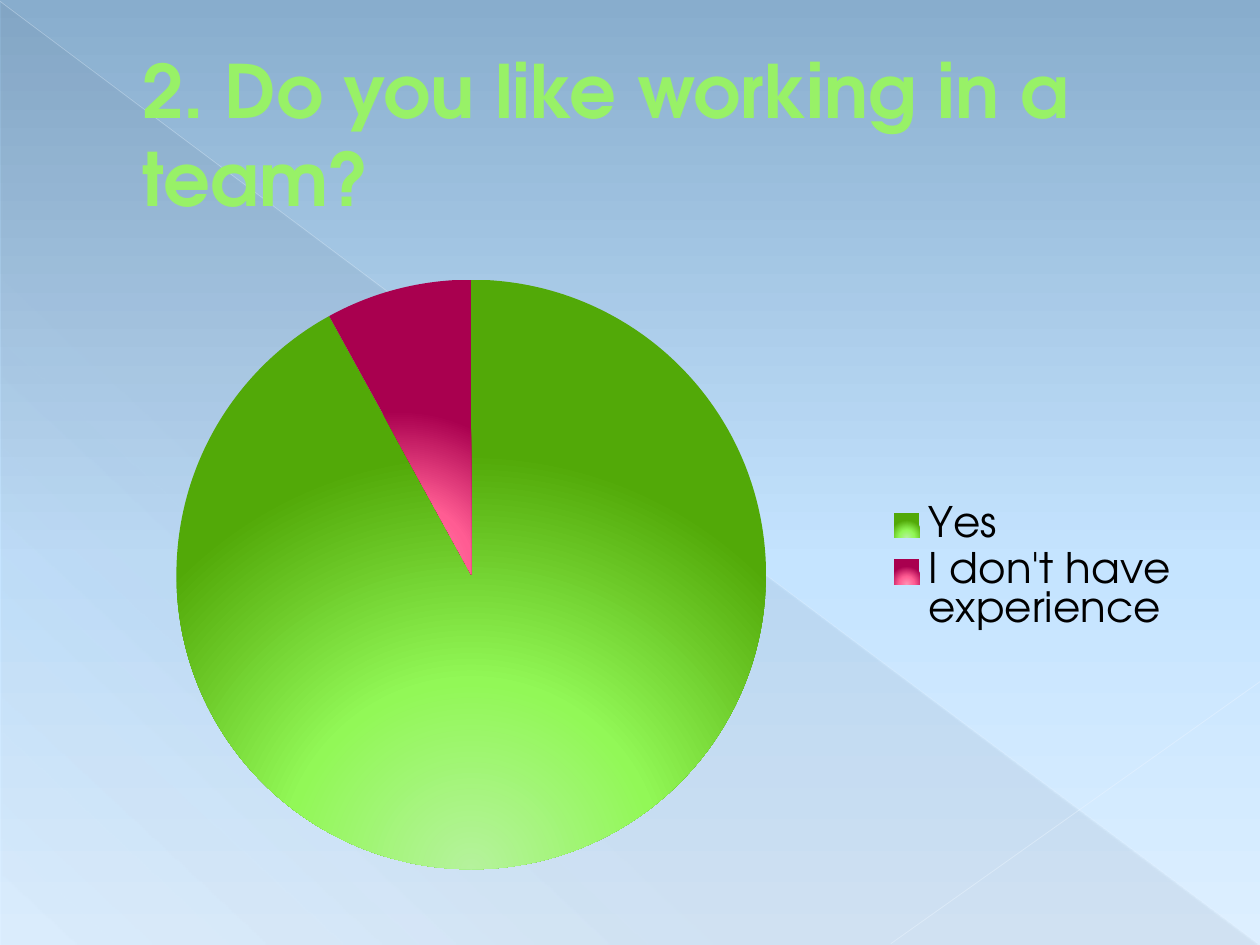
from lxml import etree
from pptx import Presentation
from pptx.chart.data import CategoryChartData
from pptx.dml.color import RGBColor
from pptx.enum.chart import XL_CHART_TYPE, XL_LEGEND_POSITION
from pptx.enum.shapes import MSO_CONNECTOR, MSO_SHAPE
from pptx.enum.text import MSO_ANCHOR, MSO_AUTO_SIZE, PP_ALIGN
from pptx.oxml.ns import qn
from pptx.util import Inches, Pt

COLORS = {
    "title": "98F167",
    "title outline": "589129",
    "text": "000000",
    "shade": "4E5B6F",
    "long line": "EAF5FF",
    "short line": "ECF6FF",
}
SKY = [(0, "88ADCD", 100), (60, "C5E4FF", 100), (100, "DDEFFF", 100)]
SHADE = [(0, COLORS["shade"], 10), (70, COLORS["shade"], 8), (100, COLORS["shade"], 1)]
SLICES = [
    [(0, "B5F29C", 100), (45, "92F857", 100), (100, "52A908", 100)],
    [(0, "FF90B4", 100), (45, "FF5C93", 100), (100, "A9004F", 100)],
]


def add_node(parent, tag, **attributes):
    node = etree.SubElement(parent, qn(tag))
    for name, value in attributes.items():
        node.set(name, str(value))
    return node


def add_color(parent, color, opacity=100):
    node = add_node(parent, "a:srgbClr", val=color)
    if opacity < 100:
        add_node(node, "a:alpha", val=opacity * 1000)


def set_gradient(fill, stops, angle=None):
    """Fill with (percent, color, opacity) stops; without an angle, radiate from the bottom."""
    fill.gradient()
    gradient = fill._xPr.find(qn("a:gradFill"))
    for child in list(gradient):
        gradient.remove(child)
    stop_list = add_node(gradient, "a:gsLst")
    for percent, color, opacity in stops:
        add_color(add_node(stop_list, "a:gs", pos=percent * 1000), color, opacity)
    if angle is None:
        path = add_node(gradient, "a:path", path="circle")
        add_node(path, "a:fillToRect", l=50000, t=100000, r=50000, b=0)
    else:
        add_node(gradient, "a:lin", ang=angle * 60000, scaled=0)


def set_layout(parent, index, inner, **fractions):
    """Place a chart part by fractions of the chart's width and height."""
    for old in parent.findall(qn("c:layout")):
        parent.remove(old)
    layout = etree.Element(qn("c:layout"))
    parent.insert(index, layout)
    manual = add_node(layout, "c:manualLayout")
    if inner:
        add_node(manual, "c:layoutTarget", val="inner")
    for mode in ("c:xMode", "c:yMode"):
        add_node(manual, mode, val="edge")
    for name, value in fractions.items():
        add_node(manual, f"c:{name}", val=value)


class SlideBuilder:
    font_name = "TeX Gyre Adventor"

    def __init__(self, slide):
        self.slide = slide

    def background(self, stops, angle):
        set_gradient(self.slide.background.fill, stops, angle)

    def triangle(self, left, top, width, height, stops, angle):
        shape = self.slide.shapes.add_shape(
            MSO_SHAPE.RIGHT_TRIANGLE, Inches(left), Inches(top), Inches(width), Inches(height))
        shape.shadow.inherit = False
        shape.line.fill.background()
        set_gradient(shape.fill, stops, angle)

    def line(self, start, end, color, width, opacity):
        points = [Inches(value) for value in (*start, *end)]
        connector = self.slide.shapes.add_connector(MSO_CONNECTOR.STRAIGHT, *points)
        connector.line.width = Pt(width)
        connector.line.color.rgb = RGBColor.from_string(color)
        properties = connector.element.spPr
        add_node(properties.find(".//" + qn("a:srgbClr")), "a:alpha", val=opacity * 1000)
        add_node(properties, "a:effectLst")

    def title(self, text, left, top, width, height):
        title = self.slide.shapes.title
        title.element.getparent().append(title.element)
        title.left, title.top = Inches(left), Inches(top)
        title.width, title.height = Inches(width), Inches(height)
        frame = title.text_frame
        frame.text = text
        frame.word_wrap = True
        frame.auto_size = MSO_AUTO_SIZE.NONE
        frame.vertical_anchor = MSO_ANCHOR.MIDDLE
        paragraph = frame.paragraphs[0]
        paragraph.alignment = PP_ALIGN.LEFT
        font = paragraph.font
        self.style(font, 42, COLORS["title"])
        font.bold = True
        paragraph_properties = paragraph._p.get_or_add_pPr()
        paragraph_properties.set("marL", str(Inches(0.53)))
        paragraph_properties.set("indent", "0")
        outline = etree.Element(qn("a:ln"), w=str(Pt(0.5)))
        add_color(add_node(outline, "a:solidFill"), COLORS["title outline"])
        font._rPr.insert(0, outline)

    def style(self, font, size, color):
        font.name = self.font_name
        font.size = Pt(size)
        font.color.rgb = RGBColor.from_string(color)

    def pie(self, answers, left, top, width, height):
        data = CategoryChartData()
        data.categories = list(answers)
        data.add_series("Series 1", list(answers.values()))
        chart = self.slide.shapes.add_chart(
            XL_CHART_TYPE.PIE, Inches(left), Inches(top), Inches(width), Inches(height), data).chart
        self.style(chart.font, 10, COLORS["text"])
        chart.has_title = False
        chart.plots[0].vary_by_categories = True
        series = chart.plots[0].series[0]
        for index, stops in enumerate(SLICES):
            point_format = series.points[index].format
            set_gradient(point_format.fill, stops)
            point_format.line.fill.background()
        chart.has_legend = True
        legend = chart.legend
        legend.position = XL_LEGEND_POSITION.RIGHT
        legend.include_in_layout = False
        self.style(legend.font, 24, COLORS["text"])
        plot_area = chart._chartSpace.find(".//" + qn("c:plotArea"))
        set_layout(plot_area, 0, True, x=0.1, y=0.03, w=0.52, h=0.94)
        set_layout(legend._element, 1, False, x=0.72, y=0.38, w=0.27, h=0.22)


def main():
    presentation = Presentation()
    presentation.slide_width, presentation.slide_height = Inches(10), Inches(7.5)
    builder = SlideBuilder(presentation.slides.add_slide(presentation.slide_layouts[5]))
    builder.background(SKY, 90)
    builder.triangle(0.01, 0.02, 9.98, 7.48, SHADE, 133)
    builder.line((0, 0.01), (9.99, 7.49), COLORS["long line"], 0.39, 35)
    builder.line((10, 5.41), (7.07, 7.49), COLORS["short line"], 0.47, 45)
    builder.title("2. Do you like working in a team?", 0.5, 0.29, 9, 1.53)
    builder.pie({"Yes": 92, "I don't have experience": 8}, 0.5, 2.06, 9, 5)
    presentation.save("out.pptx")


if __name__ == "__main__":
    main()
